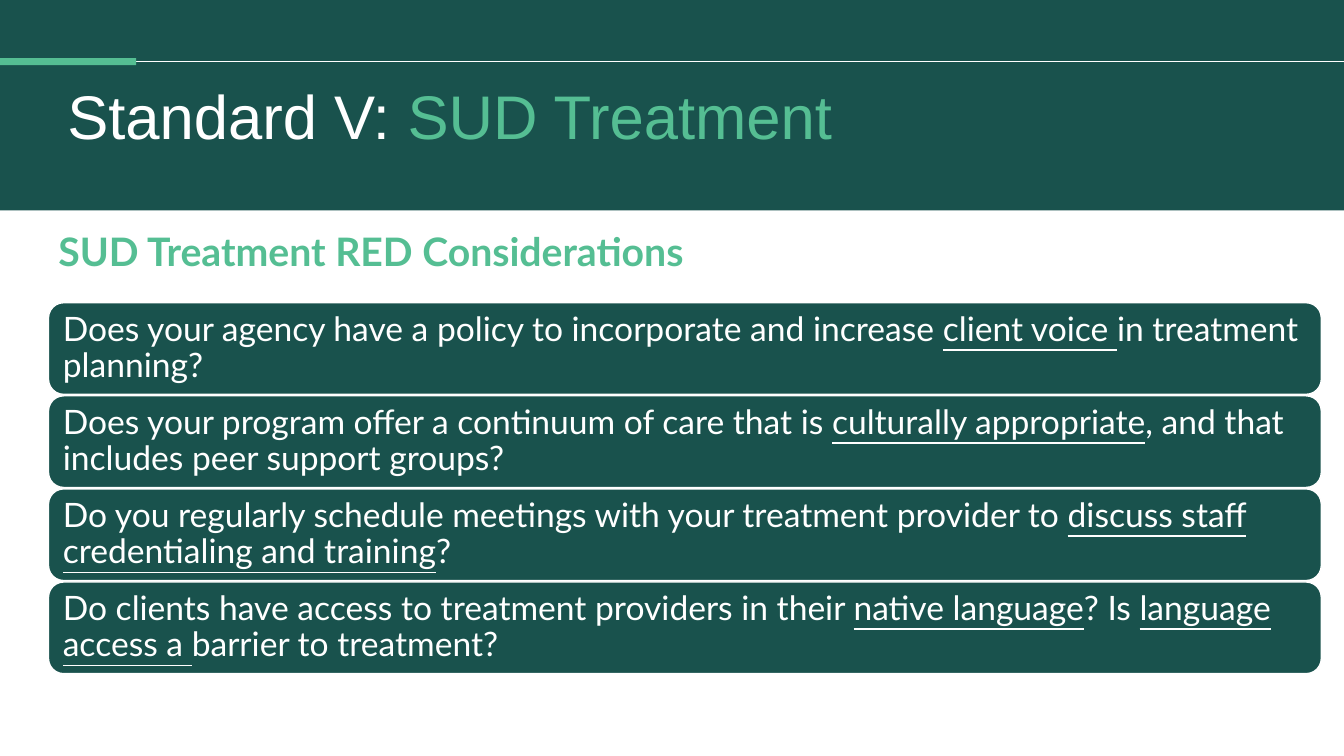
from pptx import Presentation
from pptx.dml.color import RGBColor
from pptx.enum.shapes import MSO_CONNECTOR as Link, MSO_SHAPE as Form
from pptx.enum.text import MSO_ANCHOR as Anchor, PP_ALIGN as Align
from pptx.oxml.ns import qn
from pptx.util import Pt
from lxml.etree import SubElement

WIDE, HIGH = 960, 540
DARK, MINT, WHITE = "19524D", "55BE93", "FFFFFF"
ASKS = [
    [("Does your agency have a policy to incorporate and increase ", False),
     ("client voice ", True), ("in treatment planning?", False)],
    [("Does your program offer a continuum of care that is ", False),
     ("culturally appropriate", True),
     (", and that includes peer support groups?", False)],
    [("Do you regularly schedule meetings with your treatment provider to ", False),
     ("discuss staff credentialing and training", True), ("?", False)],
    [("Do clients have access to treatment providers in their ", False),
     ("native language", True), ("? Is ", False),
     ("language access a ", True), ("barrier to treatment?", False)],
]


def tint(code):
    """Turn a hex string into a colour."""
    return RGBColor.from_string(code)


def block(slide, form, x, y, w, h, fill, edge=None):
    """Draw a flat filled shape, with an edge if one is given."""
    shape = slide.shapes.add_shape(form, Pt(x), Pt(y), Pt(w), Pt(h))
    shape.shadow.inherit = False
    shape.fill.solid()
    shape.fill.fore_color.rgb = tint(fill)
    if edge:
        shape.line.color.rgb = tint(edge)
        shape.line.width = Pt(1)
    else:
        shape.line.fill.background()
    return shape


def write(frame, runs, face, size, bold=False):
    """Fill a frame with runs of text, colour and underline."""
    frame.word_wrap = True
    para = frame.paragraphs[0]
    para.alignment = Align.LEFT
    para.line_spacing = 0.9
    for text, ink, under in runs:
        run = para.add_run()
        run.text = text
        font = run.font
        font.name, font.size, font.bold = face, Pt(size), bold
        font.underline = under
        font.color.rgb = tint(ink)


def label(slide, x, y, w, h, *style):
    """Place a text box and write its runs."""
    box = slide.shapes.add_textbox(Pt(x), Pt(y), Pt(w), Pt(h))
    write(box.text_frame, *style)


def header(slide, x, y, w, h):
    """Draw the dark band with its rule, accent and title."""
    block(slide, Form.RECTANGLE, x, y, w, h, DARK)
    mid = y + 44
    rule = slide.shapes.add_connector(
        Link.STRAIGHT, Pt(x), Pt(mid), Pt(x + w), Pt(mid))
    rule.line.color.rgb = tint(WHITE)
    rule.line.width = Pt(0.5)
    SubElement(rule._element.spPr, qn("a:effectLst"))
    block(slide, Form.RECTANGLE, x, mid - 2.5, 97.2, 5, MINT)
    title = [("Standard V: ", WHITE, False), ("SUD Treatment", MINT, False)]
    label(slide, x + 41, y + 58.3, 822, 67, title, "Arial", 44)


def pills(slide, x, y, w, h):
    """Stack the questions as rounded bars that share the height."""
    gap = 1
    tall = (h - gap * (len(ASKS) - 1)) / len(ASKS)
    for i, ask in enumerate(ASKS):
        bar = block(slide, Form.ROUNDED_RECTANGLE, x, y + i * (tall + gap),
                    w, tall, DARK, WHITE)
        frame = bar.text_frame
        frame.vertical_anchor = Anchor.MIDDLE
        frame.margin_left = frame.margin_right = Pt(7.2)
        frame.margin_top = frame.margin_bottom = Pt(7.2)
        write(frame, [(text, WHITE, under) for text, under in ask], "Lato", 24)


def main():
    """Build the slide and save it."""
    deck = Presentation()
    deck.slide_width, deck.slide_height = Pt(WIDE), Pt(HIGH)
    slide = deck.slides.add_slide(deck.slide_layouts[6])
    header(slide, 0, 0, WIDE, 150.3)
    label(slide, 34.6, 162.7, 802, 67,
          [("SUD Treatment RED Considerations", MINT, False)], "Lato", 28, True)
    pills(slide, 34.6, 216.2, 909.2, 265)
    deck.save("out.pptx")


if __name__ == "__main__":
    main()
